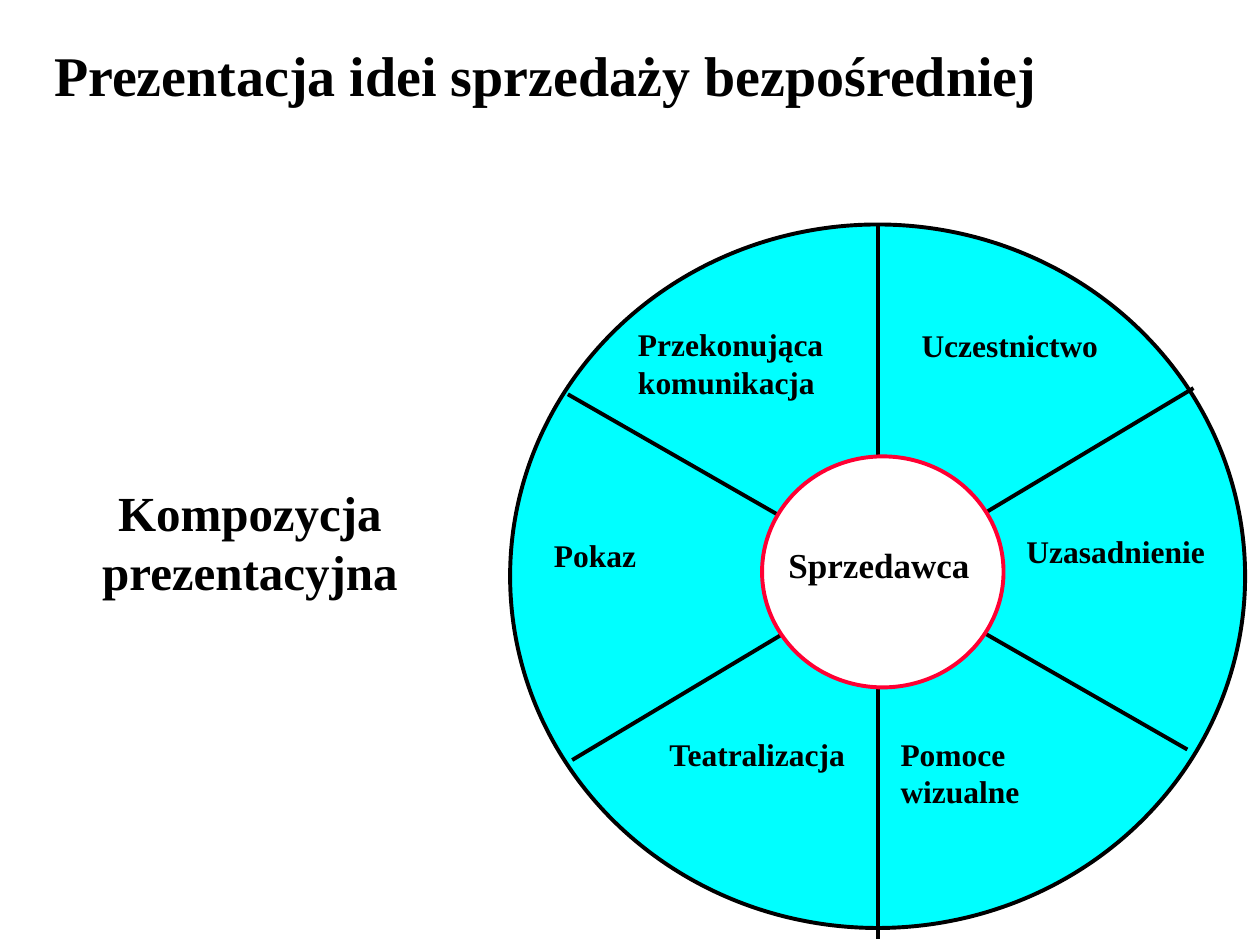
from lxml.etree import SubElement
from pptx import Presentation
from pptx.dml.color import RGBColor
from pptx.enum.shapes import MSO_CONNECTOR as Connector, MSO_SHAPE as Shape
from pptx.enum.text import MSO_ANCHOR as Anchor, MSO_AUTO_SIZE as AutoSize, PP_ALIGN as Align
from pptx.oxml.ns import qn
from pptx.util import Pt

FONT = "Times New Roman"
COLORS = {"text": "000000", "outline": "000000", "wheel": "00FFFF",
          "hub": "FFFFFF", "hub_outline": "FF0033"}
LINE_WIDTH = 2.25

# Offsets from the top left corner of the wheel
SPOKES = [((210, 0), (210, 408)),
          ((390.5, 93.5), (35.5, 306)),
          ((387, 300), (33, 97))]
HUB = (144, 132.5, 138, 132)
HUB_LABEL = ("Sprzedawca", (152, 179, 119, 31))
LABELS = [("Przekonująca\nkomunikacja", (66, 54, 124, 50.4)),
          ("Pokaz", (18, 174.5, 64, 28.8)),
          ("Uczestnictwo", (228, 54.5, 118, 28.8)),
          ("Uzasadnienie", (288, 172, 119, 28.8)),
          ("Teatralizacja", (84, 288, 122, 28.8)),
          ("Pomoce\nwizualne", (216, 288, 85, 50.4))]


def color(name):
    return RGBColor.from_string(COLORS[name])


def points(*lengths):
    return [Pt(length) for length in lengths]


def write(frame, text, size, align=Align.LEFT):
    frame.text = text
    for para in frame.paragraphs:
        para.alignment = align
        for span in para.runs:
            span.font.name = FONT
            span.font.size = Pt(size)
            span.font.bold = True
            span.font.color.rgb = color("text")


def add_label(shapes, box, text, size):
    label = shapes.add_textbox(*points(*box))
    write(label.text_frame, text, size)
    label.text_frame.word_wrap = False
    label.text_frame.auto_size = AutoSize.SHAPE_TO_FIT_TEXT


def add_disc(shapes, box, fill, outline):
    disc = shapes.add_shape(Shape.OVAL, *points(*box))
    disc.shadow.inherit = False
    disc.fill.solid()
    disc.fill.fore_color.rgb = color(fill)
    disc.line.color.rgb = color(outline)
    disc.line.width = Pt(LINE_WIDTH)


def add_spoke(shapes, start, end):
    spoke = shapes.add_connector(Connector.STRAIGHT, *points(*start, *end))
    spoke.line.color.rgb = color("outline")
    spoke.line.width = Pt(LINE_WIDTH)
    SubElement(spoke.element.spPr, qn("a:effectLst"))


def place_title(slide, box):
    title = slide.shapes.title
    title.left, title.top, title.width, title.height = points(*box)
    title.text_frame.vertical_anchor = Anchor.MIDDLE
    title.text_frame.word_wrap = True
    title.text_frame.auto_size = AutoSize.NONE
    write(title.text_frame, "Kompozycja prezentacyjna", 28, Align.CENTER)


def add_wheel(slide, box):
    left, top, width, height = box
    shapes = slide.shapes.add_group_shape().shapes

    def inside(x, y, *size):
        return (left + x, top + y, *size)

    # Rim, spokes and hub
    add_disc(shapes, box, "wheel", "outline")
    for start, end in SPOKES:
        add_spoke(shapes, inside(*start), inside(*end))
    add_disc(shapes, inside(*HUB), "hub", "hub_outline")

    # Labels
    text, place = HUB_LABEL
    add_label(shapes, inside(*place), text, 20)
    for text, place in LABELS:
        add_label(shapes, inside(*place), text, 18)


def main():
    deck = Presentation()
    deck.slide_width, deck.slide_height = points(720, 540)
    slide = deck.slides.add_slide(deck.slide_layouts[5])
    place_title(slide, (0, 264.5, 285.6, 90))
    add_wheel(slide, (291.5, 128.3, 420, 402))
    # Heading across the top
    add_label(slide.shapes, (23.8, 19.4, 582, 46), "Prezentacja idei sprzedaży bezpośredniej", 32)
    deck.save("out.pptx")


if __name__ == "__main__":
    main()
